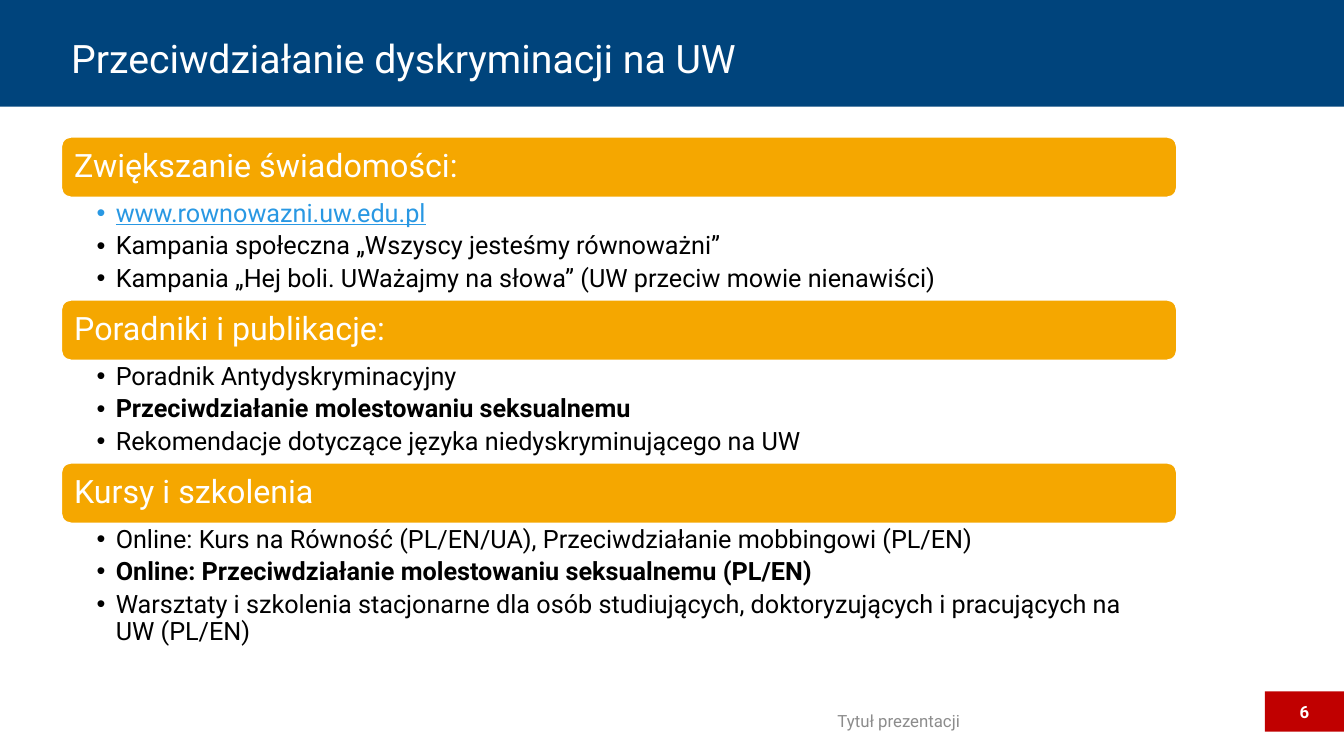
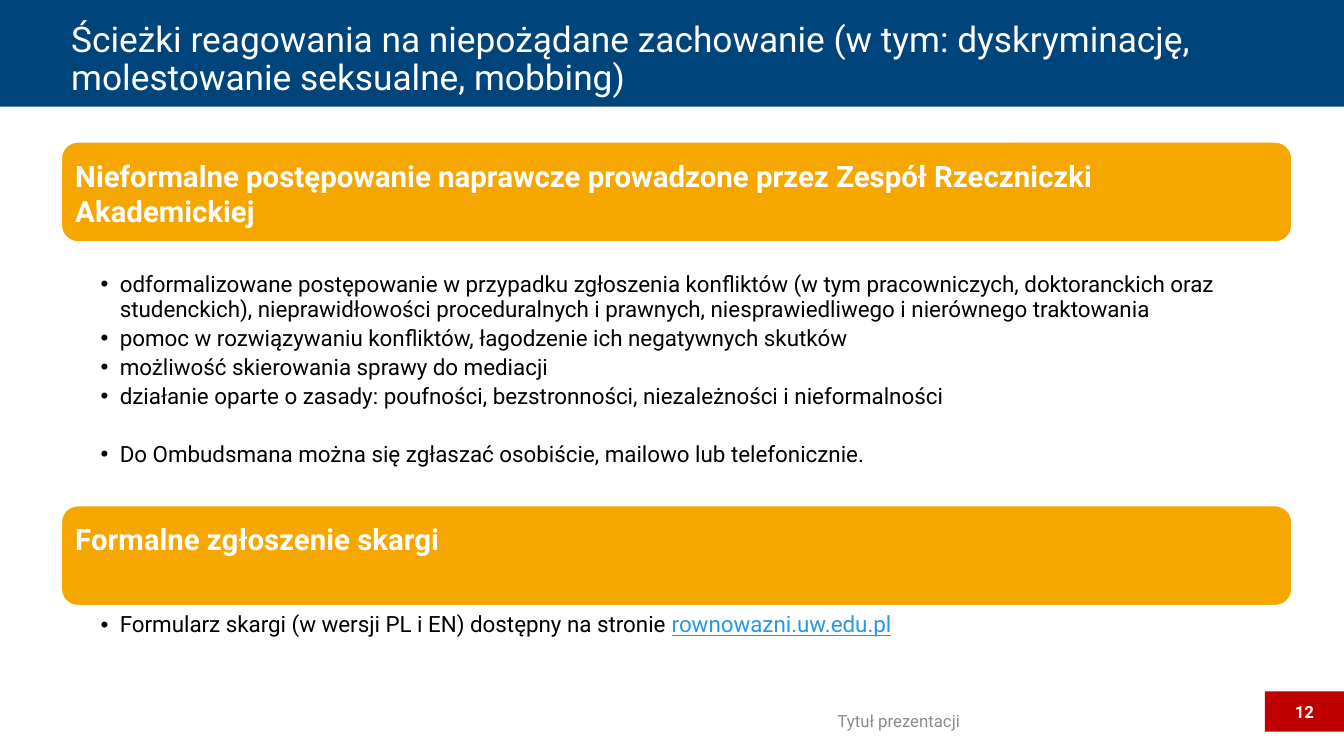
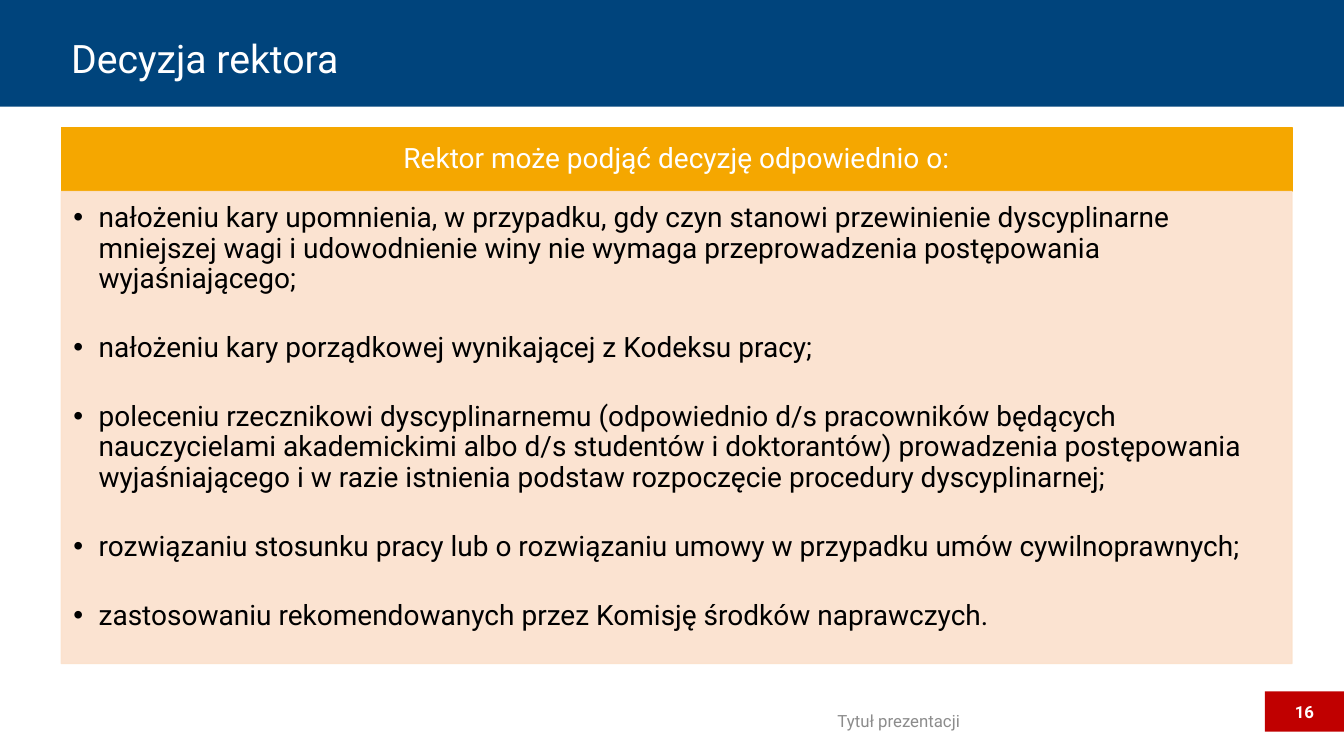
"""Build three slides on preventing discrimination at the university."""
from dataclasses import dataclass, field
from typing import Any, Optional

from lxml.etree import SubElement
from pptx import Presentation
from pptx.dml.color import RGBColor
from pptx.enum.shapes import MSO_SHAPE as Preset
from pptx.enum.text import MSO_ANCHOR as Anchor, PP_ALIGN as Align
from pptx.oxml.ns import qn
from pptx.util import Emu, Inches, Pt

NAVY = RGBColor(0x00, 0x44, 0x7C)
AMBER = RGBColor(0xF5, 0xA7, 0x00)
PEACH = RGBColor(0xFB, 0xE1, 0xCC)
RED = RGBColor(0xC0, 0x00, 0x00)
LINK = RGBColor(0x29, 0x98, 0xE3)
GREY = RGBColor(0x8C, 0x8C, 0x8C)
BLACK = RGBColor(0x00, 0x00, 0x00)
WHITE = RGBColor(0xFF, 0xFF, 0xFF)

FONT = "Roboto"
COLUMNS, ROWS = 160, 90
CELL = Inches(1 / 12)
MARGIN, FULL_WIDTH = 7.3, 146.5
INSETS = (0.1, 0.05, 0.1, 0.05)


@dataclass(frozen=True)
class Area:
    """A rectangle in columns and rows of the slide grid."""
    column: float
    row: float
    columns: float
    rows: float

    def lengths(self) -> list[Emu]:
        """Return left, top, width and height."""
        return [Emu(round(cells * CELL))
                for cells in (self.column, self.row, self.columns, self.rows)]


@dataclass(frozen=True)
class Span:
    """A run of text; without a colour it takes that of its frame."""
    text: str
    bold: bool = False
    color: Optional[RGBColor] = None
    underline: bool = False


@dataclass(frozen=True)
class Para:
    """A paragraph with its own gap above, in points, if it differs."""
    spans: tuple[Span, ...]
    before: Optional[float] = None


@dataclass(frozen=True)
class TextStyle:
    """Format of all the text in one frame."""
    size: float
    color: RGBColor = BLACK
    anchor: Anchor = Anchor.MIDDLE
    align: Align = Align.LEFT
    insets: tuple[float, float, float, float] = INSETS
    spacing: float = 0.9
    before: float = 0
    hanging: float = 0


@dataclass(frozen=True)
class Section:
    """A heading bar with the bullets under it."""
    row: float
    heading: Span
    body_row: float
    body_rows: float
    bullets: list[Para] = field(default_factory=list)


@dataclass(frozen=True)
class SectionStyle:
    """Format of the sections of one slide."""
    columns: float
    bar_rows: float
    heading: TextStyle
    body: TextStyle


def plain(text: str, bold: bool = False, before: Optional[float] = None) -> Para:
    """Return a paragraph of a single span."""
    return Para((Span(text, bold),), before)


def link(text: str) -> Span:
    """Return a span that looks like a link."""
    return Span(text, color=LINK, underline=True)


def set_all(target: Any, values: dict[str, Any]) -> None:
    """Set each named attribute of the target."""
    for name, value in values.items():
        setattr(target, name, value)


def write(box: Any, paras: list[Para], style: TextStyle) -> None:
    """Write paragraphs into the text frame of a shape."""
    frame = box.text_frame
    left, top, right, bottom = (Inches(inset) for inset in style.insets)
    set_all(frame, {"word_wrap": True, "vertical_anchor": style.anchor,
                    "margin_left": left, "margin_top": top,
                    "margin_right": right, "margin_bottom": bottom})
    for index, para in enumerate(paras):
        line = frame.add_paragraph() if index else frame.paragraphs[0]
        gap = style.before if para.before is None else para.before
        if style.hanging:
            properties = line._p.get_or_add_pPr()
            indent = Inches(style.hanging)
            properties.set("marL", str(indent))
            properties.set("indent", str(-indent))
            SubElement(properties, qn("a:buFont"), typeface="Arial")
            SubElement(properties, qn("a:buChar"), char="•")
        set_all(line, {"alignment": style.align, "line_spacing": style.spacing,
                       "space_before": Pt(gap if index else 0),
                       "space_after": Pt(0)})
        for span in para.spans:
            run = line.add_run()
            run.text = span.text
            set_all(run.font, {"name": FONT, "size": Pt(style.size),
                               "bold": span.bold, "underline": span.underline})
            run.font.color.rgb = span.color or style.color


def add_text(page: Any, area: Area, paras: list[Para], style: TextStyle) -> None:
    """Add a text box."""
    write(page.shapes.add_textbox(*area.lengths()), paras, style)


def add_block(page: Any, area: Area, fill: RGBColor, line: Optional[RGBColor] = None,
              preset: Preset = Preset.RECTANGLE) -> Any:
    """Add a filled shape, outlined if a line colour is given."""
    box = page.shapes.add_shape(preset, *area.lengths())
    box.shadow.inherit = False
    box.fill.solid()
    box.fill.fore_color.rgb = fill
    if line is None:
        box.line.fill.background()
    else:
        box.line.color.rgb = line
        box.line.width = Pt(1)
    return box


def add_page(deck: Any, title: str, number: int, title_size: float = 28) -> Any:
    """Add a slide with the title band, footer and page number."""
    page = deck.slides.add_slide(deck.slide_layouts[6])
    add_block(page, Area(0, 0, COLUMNS, 12.7), NAVY)
    add_text(page, Area(MARGIN, 3.36, FULL_WIDTH, 7.68), [plain(title)],
             TextStyle(title_size, WHITE))
    add_text(page, Area(75.4, 83.4, 63.2, 4.8), [plain("Tytuł prezentacji")],
             TextStyle(12, GREY, align=Align.CENTER, spacing=1))
    tag = add_block(page, Area(150.6, 82.3, 9.4, 4.8), RED)
    write(tag, [plain(str(number), bold=True)],
          TextStyle(12, WHITE, align=Align.CENTER, spacing=1))
    return page


def add_sections(page: Any, sections: list[Section], style: SectionStyle) -> None:
    """Add rounded heading bars and their bullets."""
    for section in sections:
        bar = add_block(page, Area(MARGIN, section.row, style.columns, style.bar_rows),
                        AMBER, WHITE, Preset.ROUNDED_RECTANGLE)
        write(bar, [Para((section.heading,))], style.heading)
        add_text(page, Area(MARGIN, section.body_row, style.columns, section.body_rows),
                 section.bullets, style.body)


def add_prevention(deck: Any) -> None:
    """Add the slide on preventing discrimination."""
    page = add_page(deck, "Przeciwdziałanie dyskryminacji na UW", 6)
    topics = [
        ("Zwiększanie świadomości:", 12.2, [
            Para((link("www.rownowazni.uw.edu.pl"),)),
            plain("Kampania społeczna „Wszyscy jesteśmy równoważni”"),
            plain("Kampania „Hej boli. UWażajmy na słowa” (UW przeciw mowie nienawiści)")]),
        ("Poradniki i publikacje:", 12.2, [
            plain("Poradnik Antydyskryminacyjny"),
            plain("Przeciwdziałanie molestowaniu seksualnemu", bold=True),
            plain("Rekomendacje dotyczące języka niedyskryminującego na UW")]),
        ("Kursy i szkolenia", 15.6, [
            plain("Online: Kurs na Równość (PL/EN/UA), Przeciwdziałanie mobbingowi (PL/EN)"),
            plain("Online: Przeciwdziałanie molestowaniu seksualnemu (PL/EN)", bold=True),
            plain("Warsztaty i szkolenia stacjonarne dla osób studiujących, "
                  "doktoryzujących i pracujących na UW (PL/EN)")]),
    ]
    first_row, pitch, bar_rows = 16.3, 19.4, 7.2
    sections = []
    for index, (heading, body_rows, bullets) in enumerate(topics):
        row = first_row + index * pitch
        sections.append(Section(row, Span(heading), row + bar_rows, body_rows, bullets))
    add_sections(page, sections, SectionStyle(
        132.8, bar_rows, TextStyle(23, WHITE, insets=(0.1, 0.1, 0.1, 0.1)),
        TextStyle(18, anchor=Anchor.TOP, insets=(0.35, 0.03, 0.18, 0.03),
                  before=4, hanging=0.19)))


def add_reactions(deck: Any) -> None:
    """Add the slide on ways to react to unwanted behaviour."""
    page = add_page(deck, "Ścieżki reagowania na niepożądane zachowanie (w tym: "
                    "dyskryminację, molestowanie seksualne, mobbing)", 12, 25.2)
    sections = [
        Section(16.9, Span("Nieformalne postępowanie naprawcze prowadzone przez "
                           "Zespół Rzeczniczki Akademickiej", bold=True), 32.2, 28, [
            plain("odformalizowane postępowanie w przypadku zgłoszenia konfliktów "
                  "(w tym pracowniczych, doktoranckich oraz studenckich), "
                  "nieprawidłowości proceduralnych i prawnych, niesprawiedliwego "
                  "i nierównego traktowania"),
            plain("pomoc w rozwiązywaniu konfliktów, łagodzenie ich negatywnych skutków"),
            plain("możliwość skierowania sprawy do mediacji"),
            plain("działanie oparte o zasady: poufności, bezstronności, "
                  "niezależności i nieformalności"),
            plain("Do Ombudsmana można się zgłaszać osobiście, mailowo lub "
                  "telefonicznie.", before=24)]),
        Section(60.2, Span("Formalne zgłoszenie skargi", bold=True), 72.7, 4.6, [
            Para((Span("Formularz skargi (w wersji PL i EN) dostępny na stronie "),
                  link("rownowazni.uw.edu.pl")))]),
    ]
    add_sections(page, sections, SectionStyle(
        FULL_WIDTH, 11.9,
        TextStyle(21, WHITE, Anchor.TOP, insets=(0.09, 0.11, 0.09, 0.09), spacing=1),
        TextStyle(16, anchor=Anchor.TOP, insets=(0.39, 0.03, 0.16, 0.03),
                  before=3.6, hanging=0.19)))


def add_decision(deck: Any) -> None:
    """Add the slide on the rector's decision."""
    page = add_page(deck, "Decyzja rektora", 16)
    header = Area(MARGIN, 15.2, FULL_WIDTH, 7.6)
    write(add_block(page, header, AMBER, AMBER),
          [plain("Rektor może podjąć decyzję odpowiednio o:")],
          TextStyle(20, WHITE, align=Align.CENTER, insets=(0.16, 0.09, 0.16, 0.09)))
    panel = add_block(page, Area(MARGIN, header.row + header.rows, FULL_WIDTH, 56.2),
                      PEACH, PEACH)
    for color in panel._element.spPr.iter(qn("a:srgbClr")):
        SubElement(color, qn("a:alpha"), val="90000")
    decisions = [
        "nałożeniu kary upomnienia, w przypadku, gdy czyn stanowi przewinienie "
        "dyscyplinarne mniejszej wagi i udowodnienie winy nie wymaga "
        "przeprowadzenia postępowania wyjaśniającego;",
        "nałożeniu kary porządkowej wynikającej z Kodeksu pracy;",
        "poleceniu rzecznikowi dyscyplinarnemu (odpowiednio d/s pracowników będących "
        "nauczycielami akademickimi albo d/s studentów i doktorantów) prowadzenia "
        "postępowania wyjaśniającego i w razie istnienia podstaw rozpoczęcie "
        "procedury dyscyplinarnej;",
        "rozwiązaniu stosunku pracy lub o rozwiązaniu umowy w przypadku umów "
        "cywilnoprawnych;",
        "zastosowaniu rekomendowanych przez Komisję środków naprawczych.",
    ]
    write(panel, [plain(decision) for decision in decisions],
          TextStyle(20, anchor=Anchor.TOP, insets=(0.12, 0.12, 0.16, 0.17),
                    before=27.8, hanging=0.25))


def main() -> None:
    """Build and save the deck."""
    deck = Presentation()
    set_all(deck, {"slide_width": Emu(COLUMNS * CELL), "slide_height": Emu(ROWS * CELL)})
    for add_slide in (add_prevention, add_reactions, add_decision):
        add_slide(deck)
    deck.save("out.pptx")


if __name__ == "__main__":
    main()
